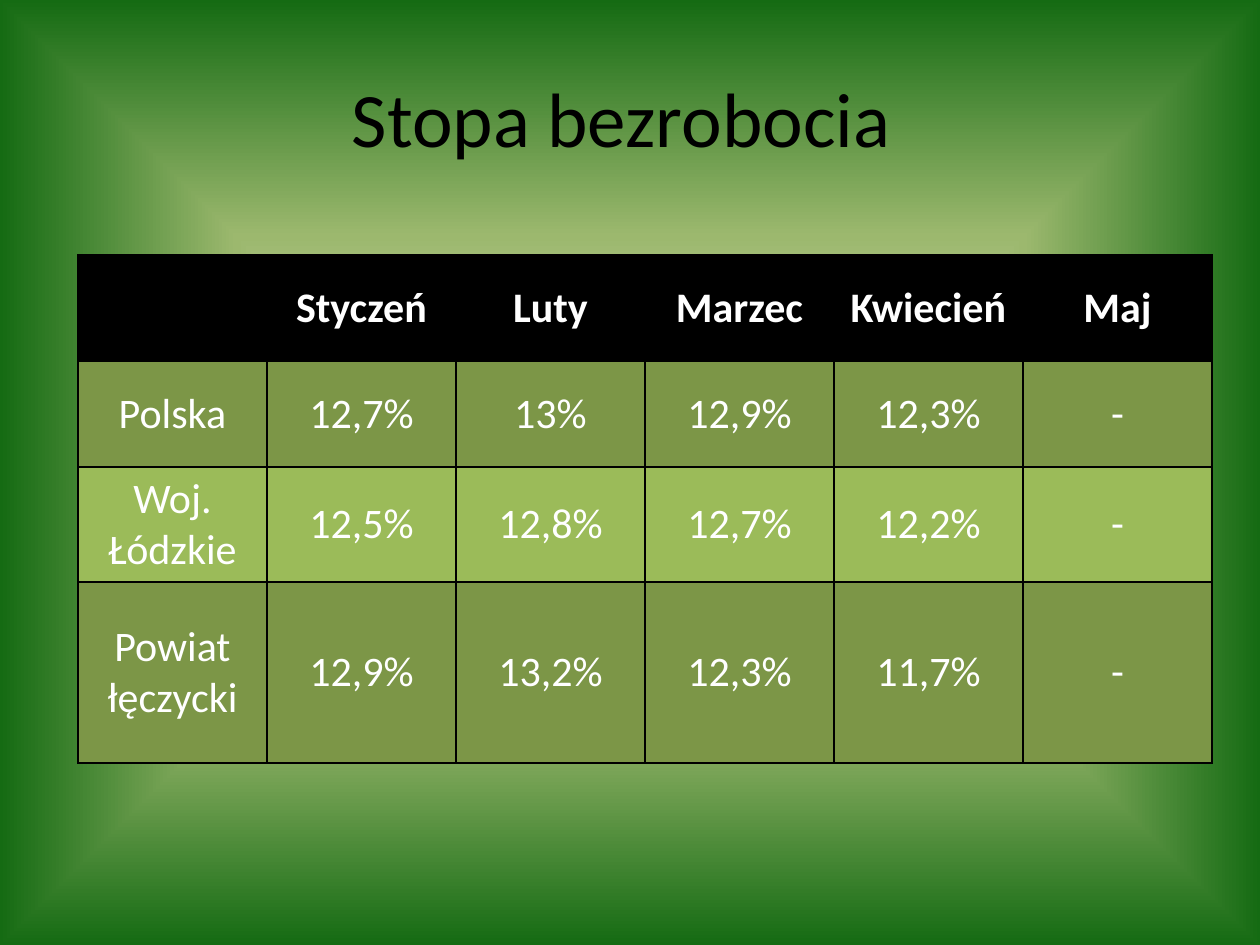
from lxml.etree import SubElement
from pptx import Presentation
from pptx.dml.color import RGBColor
from pptx.enum.text import MSO_ANCHOR, PP_ALIGN
from pptx.oxml import parse_xml
from pptx.oxml.ns import nsdecls, qn
from pptx.util import Pt

TITLE = "Stopa bezrobocia "
ROWS = [
    ["", "Styczeń", "Luty", "Marzec", "Kwiecień", "Maj"],
    ["Polska", "12,7%", "13%", "12,9%", "12,3%", "-"],
    ["Woj. Łódzkie", "12,5%", "12,8%", "12,7%", "12,2%", "-"],
    ["Powiat łęczycki", "12,9%", "13,2%", "12,3%", "11,7%", "-"],
]
HIGH = [106, 106, 106, 181]
WIDE = 189
INK = {"black": "000000", "white": "FFFFFF", "dark": "7C9647", "light": "9BBB59"}
BANDS = ["black", "dark", "light", "dark"]
STOPS = [(0, "DDEBCF"), (50, "9CB86E"), (100, "156B13")]
FONT = "Calibri"


def px(*nums):
    return [round(n * 914400 / 126) for n in nums]


def write(frame, text, size, ink, bold=False):
    frame.vertical_anchor = MSO_ANCHOR.MIDDLE
    para = frame.paragraphs[0]
    para.alignment = PP_ALIGN.CENTER
    run = para.add_run()
    run.text = text
    run.font.name, run.font.size, run.font.bold = FONT, Pt(size), bold
    run.font.color.rgb = RGBColor.from_string(INK[ink])


def shade(slide):
    """Fill the background with a gradient that spreads from the centre."""
    fill = slide.background.fill
    fill.solid()
    stops = "".join(
        f'<a:gs pos="{pos * 1000}"><a:srgbClr val="{tone}"/></a:gs>' for pos, tone in STOPS
    )
    grad = parse_xml(
        f'<a:gradFill {nsdecls("a")} rotWithShape="1"><a:gsLst>{stops}</a:gsLst>'
        '<a:path path="rect"><a:fillToRect l="50000" t="50000" r="50000" b="50000"/>'
        "</a:path></a:gradFill>"
    )
    solid = next(slide.element.iter(qn("a:solidFill")))
    solid.getparent().replace(solid, grad)


def edge(cell):
    """Draw a thin black line on all four sides."""
    props = cell._tc.get_or_add_tcPr()
    for side in ("lnL", "lnR", "lnT", "lnB"):
        line = SubElement(props, qn(f"a:{side}"), w=str(Pt(1)))
        solid = SubElement(line, qn("a:solidFill"))
        SubElement(solid, qn("a:srgbClr"), val=INK["black"])


deck = Presentation()
deck.slide_width, deck.slide_height = px(1260, 945)
slide = deck.slides.add_slide(deck.slide_layouts[5])
shade(slide)

title = slide.shapes.title
title.left, title.top, title.width, title.height = px(63, 38, 1134, 158)
write(title.text_frame, TITLE, 44, "black")

cols = len(ROWS[0])
box = px(78, 255, WIDE * cols, sum(HIGH))
table = slide.shapes.add_table(len(ROWS), cols, *box).table
for col, wide in zip(table.columns, px(*[WIDE] * cols)):
    col.width = wide
for i, (row, high) in enumerate(zip(table.rows, px(*HIGH))):
    row.height = high
    for cell, text in zip(row.cells, ROWS[i]):
        edge(cell)
        cell.fill.solid()
        cell.fill.fore_color.rgb = RGBColor.from_string(INK[BANDS[i]])
        cell.vertical_anchor = MSO_ANCHOR.MIDDLE
        if text:
            write(cell.text_frame, text, 24, "white", bold=i == 0)

deck.save("out.pptx")
